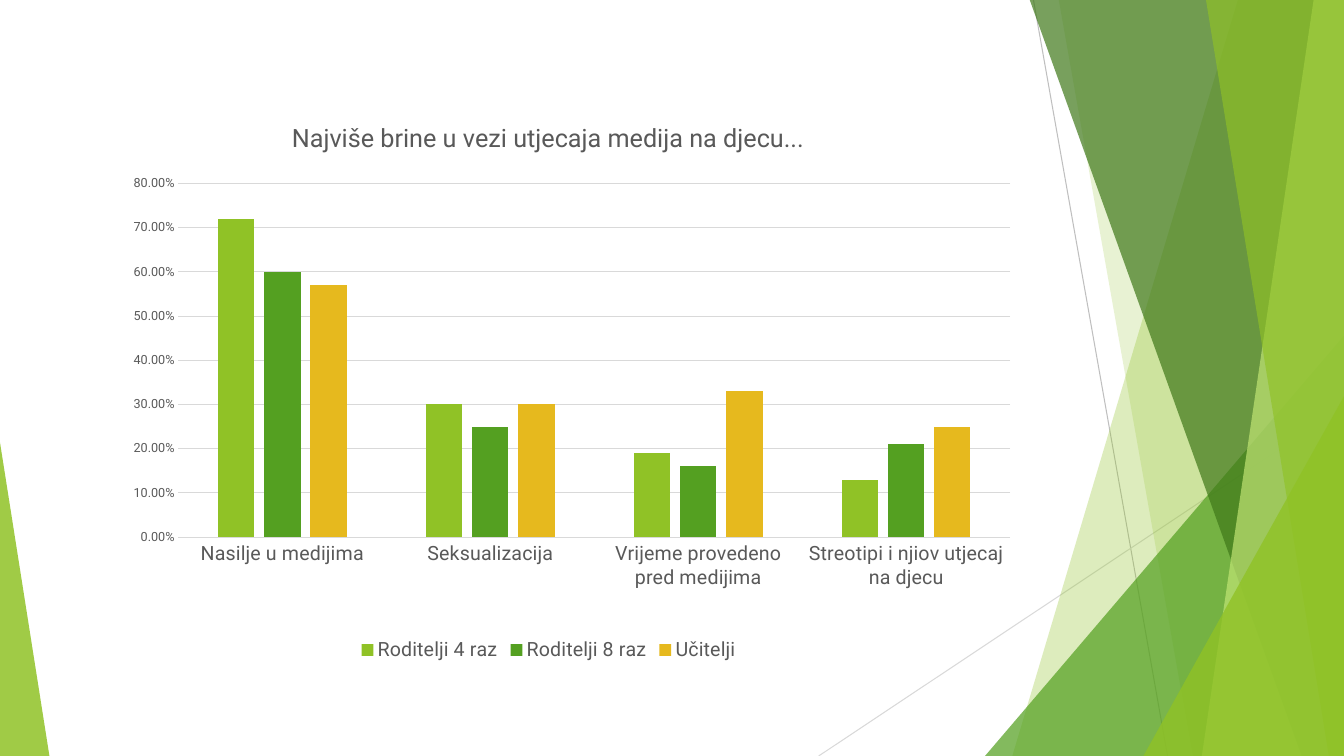
from lxml import etree
from pptx import Presentation
from pptx.chart.data import CategoryChartData
from pptx.dml.color import RGBColor
from pptx.enum.chart import XL_CHART_TYPE, XL_LEGEND_POSITION, XL_TICK_MARK
from pptx.enum.shapes import MSO_CONNECTOR, MSO_SHAPE
from pptx.oxml import parse_xml
from pptx.oxml.ns import nsdecls, qn
from pptx.util import Inches, Pt

WIDTH, HEIGHT = 13.33, 7.5
CHART_WIDTH, CHART_HEIGHT = 9.4, 5.61
BAND_TOP = -0.01
FONT = "Roboto"
LIME, GREEN, GOLD = "90C226", "54A021", "E6B91E"
TEXT, GRID = "595959", "D9D9D9"

RAYS = [("BFBFBF", (10.25, 0), (11.58, HEIGHT)),
        (GRID, (WIDTH, 4.03), (8.12, HEIGHT))]
# Each band: top left x, bottom left x, colour, opacity; it runs to the right edge.
BACK_BANDS = [(12.28, 10.04, LIME, 30), (10.5, 11.83, LIME, 20)]
FRONT_BANDS = [(10.21, 12.91, "3F7819", 70), (13.03, 11.92, "C0E474", 70),
               (11.96, 13.18, LIME, 65)]

CATEGORIES = ["Nasilje u medijima", "Seksualizacija",
              "Vrijeme provedeno pred medijima", "Streotipi i njiov utjecaj na djecu"]
SERIES = [("Roditelji 4 raz", LIME, (0.72, 0.3, 0.19, 0.13)),
          ("Roditelji 8 raz", GREEN, (0.6, 0.25, 0.16, 0.21)),
          ("Učitelji", GOLD, (0.57, 0.3, 0.33, 0.25))]


def rgb(code):
    return RGBColor.from_string(code)


def paint(shape, color, opacity):
    """Fill a shape with a see-through colour, without outline or shadow."""
    shape.shadow.inherit = False
    shape.line.fill.background()
    shape.fill.solid()
    shape.fill.fore_color.rgb = rgb(color)
    color_element = shape.fill._xPr.find(".//" + qn("a:srgbClr"))
    etree.SubElement(color_element, qn("a:alpha"), val=str(opacity * 1000))


def add_ray(slide, color, start, end):
    ray = slide.shapes.add_connector(
        MSO_CONNECTOR.STRAIGHT, *(Inches(value) for value in start + end))
    ray.line.color.rgb = rgb(color)
    ray.line.width = Pt(0.75)
    etree.SubElement(ray._element.spPr, qn("a:effectLst"))


def add_band(slide, top_x, bottom_x, color, opacity):
    corners = [(top_x, BAND_TOP), (WIDTH, BAND_TOP), (WIDTH, HEIGHT), (bottom_x, HEIGHT)]
    points = [(Inches(x), Inches(y)) for x, y in corners]
    builder = slide.shapes.build_freeform(*points[0])
    builder.add_line_segments(points[1:])
    paint(builder.convert_to_shape(), color, opacity)


def add_corner(slide, left, right, top, apex, color, opacity):
    """Add a triangle on the bottom edge, its apex at 0 (left) or 1 (right)."""
    corner = slide.shapes.add_shape(
        MSO_SHAPE.ISOSCELES_TRIANGLE, Inches(left), Inches(top),
        Inches(right - left), Inches(HEIGHT - top))
    corner.adjustments[0] = apex
    paint(corner, color, opacity)


def set_font(font, size, color=TEXT):
    font.name = FONT
    font.size = Pt(size)
    font.bold = False
    font.color.rgb = rgb(color)


def set_line(line, color):
    line.color.rgb = rgb(color)
    line.width = Pt(0.75)


def set_layout(parent, index, left, top, size=None):
    """Place a chart part, in inches from the chart's corner; size is for the plot."""
    for old in parent.findall(qn("c:layout")):
        parent.remove(old)
    values = {"layoutTarget": "inner"} if size else {}
    values.update(xMode="edge", yMode="edge", x=left / CHART_WIDTH, y=top / CHART_HEIGHT)
    if size:
        values.update(w=size[0] / CHART_WIDTH, h=size[1] / CHART_HEIGHT)
    entries = "".join(f'<c:{name} val="{value}"/>' for name, value in values.items())
    parent.insert(index, parse_xml(
        f'<c:layout {nsdecls("c")}><c:manualLayout>{entries}</c:manualLayout></c:layout>'))


def format_title(chart):
    frame = chart.chart_title.text_frame
    frame.text = "Najviše brine u vezi utjecaja medija na djecu..."
    set_font(frame.paragraphs[0].font, 18)
    set_layout(chart.chart_title._element, 1, 2.11, 0.16)


def format_axes(chart):
    for axis, size in ((chart.category_axis, 14), (chart.value_axis, 9)):
        axis.major_tick_mark = axis.minor_tick_mark = XL_TICK_MARK.NONE
        set_font(axis.tick_labels.font, size)
    set_line(chart.category_axis.format.line, GRID)
    value_axis = chart.value_axis
    value_axis.minimum_scale, value_axis.maximum_scale = 0, 0.8
    value_axis.major_unit = 0.1
    value_axis.format.line.fill.background()
    set_line(value_axis.major_gridlines.format.line, GRID)
    value_axis.tick_labels.number_format = "0.00%"
    value_axis.tick_labels.number_format_is_linked = False


def add_worries_chart(slide):
    data = CategoryChartData(number_format="0.00%")
    data.categories = CATEGORIES
    for name, _, values in SERIES:
        data.add_series(name, values)
    chart = slide.shapes.add_chart(
        XL_CHART_TYPE.COLUMN_CLUSTERED, Inches(0.74), Inches(1),
        Inches(CHART_WIDTH), Inches(CHART_HEIGHT), data).chart
    set_font(chart.font, 10, "000000")
    format_title(chart)
    format_axes(chart)

    plot = chart.plots[0]
    plot.vary_by_categories = False
    plot.gap_width, plot.overlap = 219, -27
    for series, (_, color, _) in zip(plot.series, SERIES):
        series.format.fill.solid()
        series.format.fill.fore_color.rgb = rgb(color)
    set_layout(chart._chartSpace.chart.plotArea, 0, 1.03, 0.82, size=(8.25, 3.51))

    chart.has_legend = True
    chart.legend.position = XL_LEGEND_POSITION.BOTTOM
    chart.legend.include_in_layout = False
    set_font(chart.legend.font, 14)


def main():
    presentation = Presentation()
    presentation.slide_width = Inches(WIDTH)
    presentation.slide_height = Inches(HEIGHT)
    slide = presentation.slides.add_slide(presentation.slide_layouts[6])

    for ray in RAYS:
        add_ray(slide, *ray)
    for band in BACK_BANDS:
        add_band(slide, *band)
    add_corner(slide, 9.77, WIDTH, 3.33, 1, GREEN, 72)
    for band in FRONT_BANDS:
        add_band(slide, *band)
    add_corner(slide, 11.34, WIDTH, 3.93, 1, LIME, 80)
    add_corner(slide, 0, 0.49, 4.39, 0, LIME, 85)
    add_worries_chart(slide)

    presentation.save("out.pptx")


if __name__ == "__main__":
    main()
